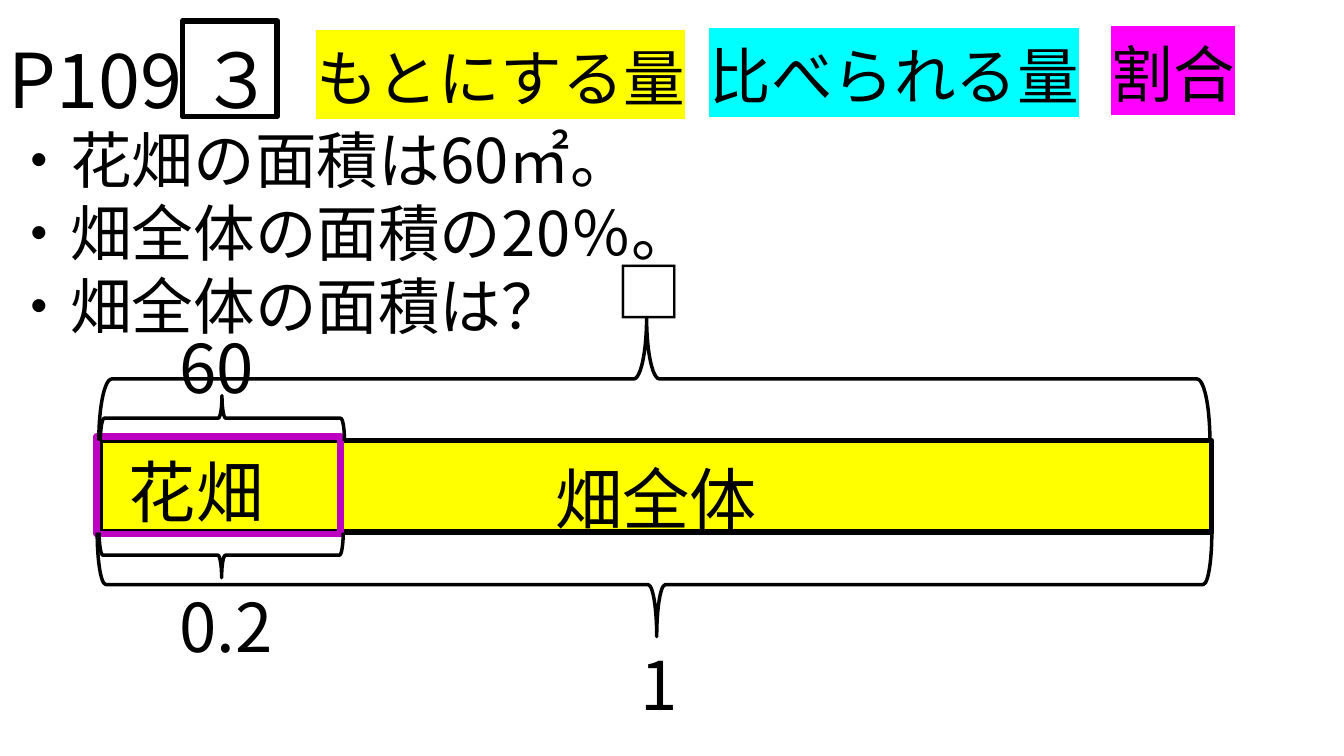
from lxml.etree import SubElement
from pptx import Presentation
from pptx.dml.color import RGBColor
from pptx.enum.shapes import MSO_SHAPE
from pptx.enum.text import MSO_ANCHOR, PP_ALIGN
from pptx.oxml.ns import qn
from pptx.util import Cm, Pt

FONT = "Noto Sans CJK JP"
LINE_HEIGHT = 1.185
COLORS = {
    "ink": "000000",
    "paper": "FFFFFF",
    "base": "FFFF00",
    "compared": "00FFFF",
    "ratio": "FF00FF",
    "flower": "BC02C0",
}


def color(name):
    """Return the named colour."""
    return RGBColor.from_string(COLORS[name])


def style_span(span, size, highlight=None):
    """Set the font, size, colour and highlight of a run."""
    span.font.size = Pt(size)
    span.font.color.rgb = color("ink")
    span.font.name = FONT
    properties = span.font._element
    east_asian = SubElement(properties, qn("a:ea"), typeface=FONT)
    properties.find(qn("a:latin")).addnext(east_asian)
    if highlight:
        marker = SubElement(properties, qn("a:highlight"))
        SubElement(marker, qn("a:srgbClr"), val=COLORS[highlight])
        properties.find(qn("a:solidFill")).addnext(marker)


def add_text(page, lines, left, top, width, height, highlight=None, fill=None):
    """Add a text box from (text, size) lines."""
    box = page.shapes.add_textbox(Cm(left), Cm(top), Cm(width), Cm(height))
    if fill:
        box.fill.solid()
        box.fill.fore_color.rgb = color(fill)
    frame = box.text_frame
    frame.word_wrap = True
    frame.vertical_anchor = MSO_ANCHOR.TOP
    frame.margin_top = Pt(3.6 + 0.1 * lines[0][1])
    frame.text = "\n".join(text for text, _ in lines)
    for para, (_, size) in zip(frame.paragraphs, lines):
        para.alignment = PP_ALIGN.LEFT
        para.line_spacing = Pt(round(size * LINE_HEIGHT, 1))
        for span in para.runs:
            style_span(span, size, highlight)


def add_outline(page, kind, left, top, width, height, weight, line="ink", fill=None):
    """Add an outlined preset shape, filled only on request."""
    shape = page.shapes.add_shape(kind, Cm(left), Cm(top), Cm(width), Cm(height))
    shape.shadow.inherit = False
    shape.line.color.rgb = color(line)
    shape.line.width = Pt(weight)
    if fill:
        shape.fill.solid()
        shape.fill.fore_color.rgb = color(fill)
    else:
        shape.fill.background()
    return shape


def add_brace(page, left, top, width, height, rotation, curve, tip):
    """Add a horizontal brace that fills the given box."""
    brace = add_outline(
        page, MSO_SHAPE.LEFT_BRACE,
        left + (width - height) / 2, top + (height - width) / 2,
        height, width, 2.5,
    )
    brace.rotation = rotation
    brace.adjustments[0] = curve
    brace.adjustments[1] = tip


def draw_problem(page, left, top, width, height):
    """Draw the page number, the boxed question number and the problem."""
    lines = [
        ("P109 ３", 54),
        ("・花畑の面積は60㎡。", 44),
        ("・畑全体の面積の20％。", 44),
        ("・畑全体の面積は？", 44),
    ]
    add_text(page, lines, left, top, width, height)
    add_outline(page, MSO_SHAPE.RECTANGLE, left + 4.63, top, 2.39, 2.41, 4)


def draw_terms(page, left, top, height):
    """Draw the three highlighted terms in a row."""
    terms = [
        ("もとにする量", 0, 0.1, 11.4, "base", "paper"),
        ("比べられる量", 9.91, 0.05, 11, "compared", "paper"),
        ("割合", 20.04, 0, 3.63, "ratio", None),
    ]
    for text, across, down, width, highlight, fill in terms:
        add_text(page, [(text, 44)], left + across, top + down, width, height,
                 highlight, fill)


def draw_diagram(page, left, top, width, height):
    """Draw the field bar with its braces and quantities."""
    part = 6.15
    below = top + height + 0.01
    add_outline(page, MSO_SHAPE.RECTANGLE, left, top, width, height, 3.75,
                fill="base")
    add_outline(page, MSO_SHAPE.RECTANGLE, left - 0.1, top - 0.1, part, 2.46, 4.75,
                line="flower")
    braces = [
        (left - 0.09, below, width + 0.09, 2.62, 270, 0.083, 0.502),
        (left - 0.04, below, part, 1.14, 270, 0.083, 0.502),
        (left - 0.05, top - 3.1, width, 3.1, 90, 0.105, 0.507),
        (left - 0.01, top - 1.13, part, 1.14, 90, 0.083, 0.502),
    ]
    for brace in braces:
        add_brace(page, *brace)
    labels = [
        ("0.2", 1.73, 3.38, 4.09),
        ("1", 13.36, 4.85, 2.01),
        ("畑全体", 11.2, 0.15, 11.15),
        ("□", 12.73, -5.05, 3.4),
        ("花畑", 0.46, -0.03, 4.75),
        ("60", 1.73, -3.15, 4.09),
    ]
    for text, across, down, label_width in labels:
        add_text(page, [(text, 48)], left + across, top + down, label_width, 2.31)


def main():
    """Build and save the slide."""
    deck = Presentation()
    deck.slide_width = Cm(33.87)
    deck.slide_height = Cm(19.05)
    page = deck.slides.add_slide(deck.slide_layouts[6])
    draw_problem(page, -0.03, 0.53, 33.87, 8.2)
    draw_terms(page, 7.72, 0.64, 2.13)
    draw_diagram(page, 2.54, 11.1, 28, 2.31)
    deck.save("out.pptx")


if __name__ == "__main__":
    main()
